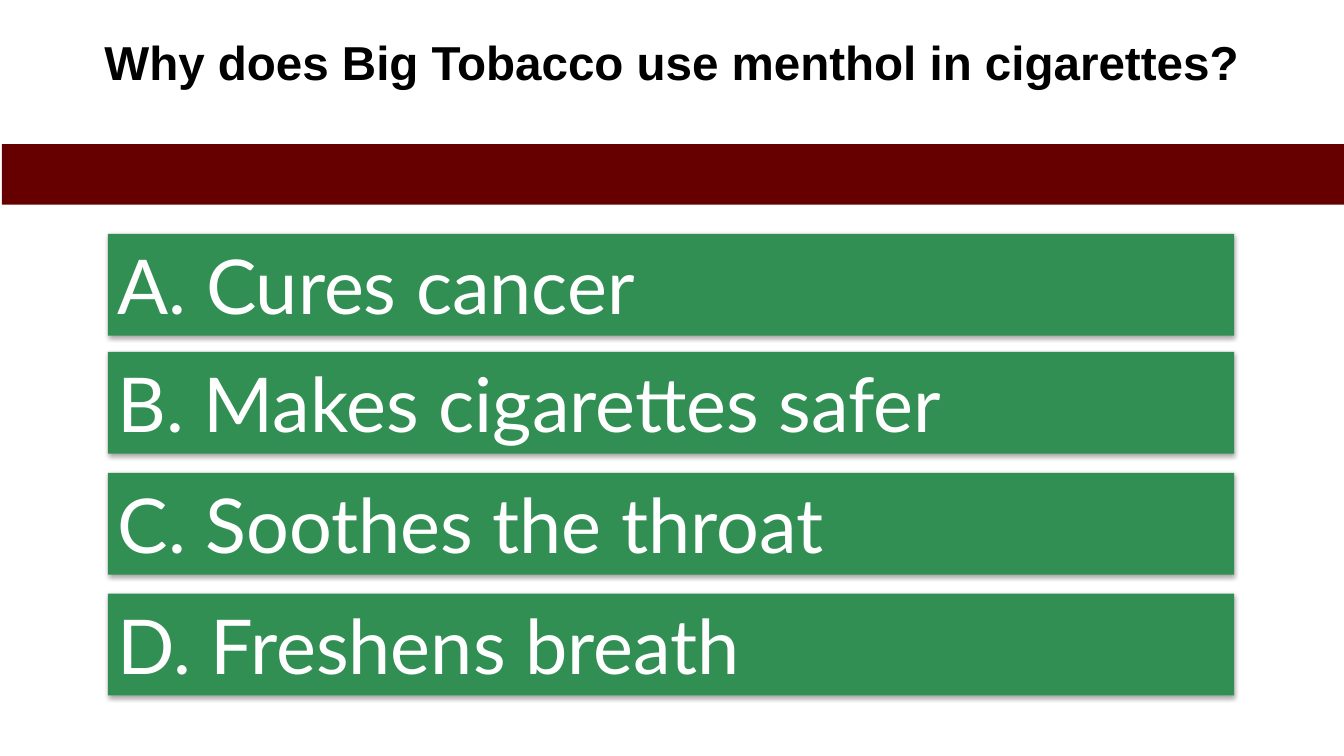
from lxml.etree import SubElement
from pptx import Presentation
from pptx.dml.color import RGBColor
from pptx.enum.shapes import MSO_SHAPE
from pptx.enum.text import MSO_ANCHOR, MSO_AUTO_SIZE, PP_ALIGN
from pptx.oxml.ns import qn
from pptx.util import Pt

BLACK = RGBColor(0x00, 0x00, 0x00)
WHITE = RGBColor(0xFF, 0xFF, 0xFF)
GREEN = RGBColor(0x32, 0x8F, 0x54)
MAROON = RGBColor(0x66, 0x00, 0x00)

ANSWERS = [
    ("A. Cures cancer", 167),
    ("B. Makes cigarettes safer", 251.3),
    ("C. Soothes the throat", 337.7),
    ("D. Freshens breath", 424.1),
]

presentation = Presentation()
presentation.slide_width = Pt(960)
presentation.slide_height = Pt(540)
slide = presentation.slides.add_slide(presentation.slide_layouts[6])


def add_bar(left, top, width, height, color):
    shape = slide.shapes.add_shape(
        MSO_SHAPE.RECTANGLE, Pt(left), Pt(top), Pt(width), Pt(height))
    shape.shadow.inherit = False
    shape.fill.solid()
    shape.fill.fore_color.rgb = color
    shape.line.fill.background()
    return shape


def add_run(paragraph, text, font_name, size, color):
    run = paragraph.add_run()
    run.text = text
    run.font.name = font_name
    run.font.size = Pt(size)
    run.font.color.rgb = color
    return run


# Question
question = slide.shapes.add_textbox(Pt(0), Pt(20.2), Pt(960), Pt(77.8))
question.text_frame.word_wrap = True
paragraph = question.text_frame.paragraphs[0]
paragraph.alignment = PP_ALIGN.CENTER
space_before = SubElement(paragraph._p.get_or_add_pPr(), qn("a:spcBef"))
SubElement(space_before, qn("a:spcPct"), val="20000")
run = add_run(paragraph, "Why does Big Tobacco use menthol in cigarettes?",
              "Arial", 34, BLACK)
run.font.bold = True

# Answer bars with a soft shadow below
for answer, top in ANSWERS:
    bar = add_bar(77, top, 804.5, 72.7, GREEN)
    effects = bar._element.spPr.find(qn("a:effectLst"))
    shadow = SubElement(effects, qn("a:outerShdw"), blurRad=str(Pt(3.1)),
                        dist=str(Pt(1.8)), dir="5400000", rotWithShape="0")
    shadow_color = SubElement(shadow, qn("a:srgbClr"), val=str(BLACK))
    SubElement(shadow_color, qn("a:alpha"), val="35000")

    text_frame = bar.text_frame
    text_frame.word_wrap = True
    text_frame.auto_size = MSO_AUTO_SIZE.SHAPE_TO_FIT_TEXT
    text_frame.vertical_anchor = MSO_ANCHOR.TOP
    paragraph = text_frame.paragraphs[0]
    paragraph.alignment = PP_ALIGN.LEFT
    add_run(paragraph, answer, "Lato", 54, WHITE)

# Divider band
add_bar(1.4, 103, 960, 43.2, MAROON)

presentation.save("out.pptx")
